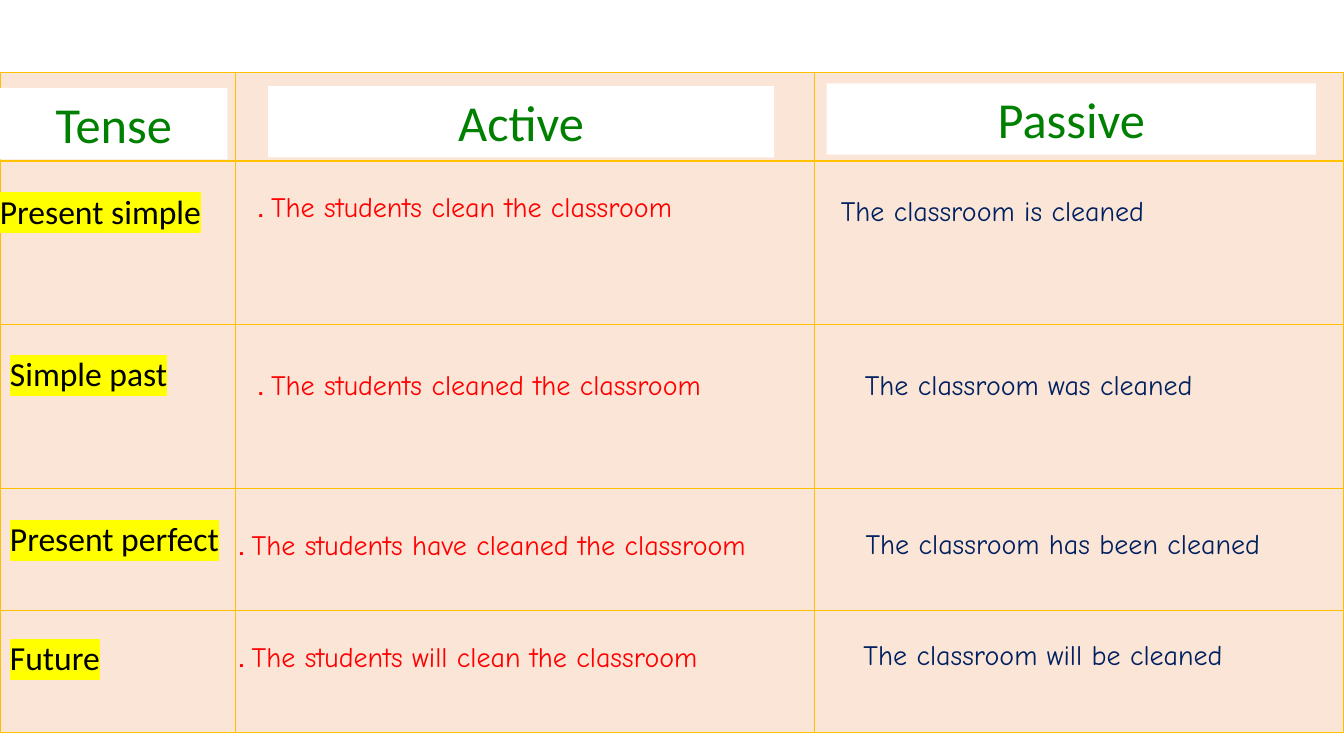
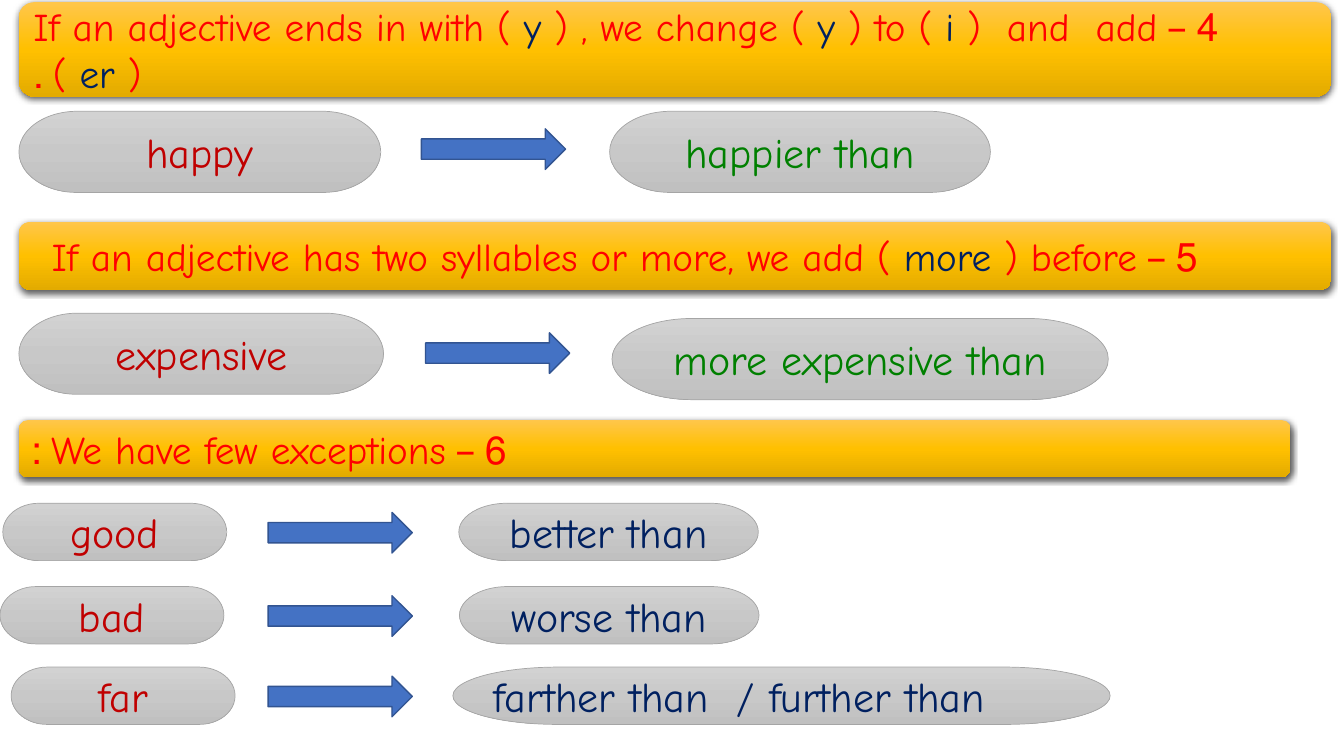
from pptx import Presentation
from pptx.dml.color import RGBColor
from pptx.enum.shapes import MSO_SHAPE as SHAPE
from pptx.enum.text import MSO_ANCHOR as ANCHOR, PP_ALIGN as ALIGN
from pptx.oxml import parse_xml
from pptx.oxml.ns import nsdecls, qn
from pptx.util import Pt

# Colours
RED = RGBColor(0xFF, 0x00, 0x00)
CRIMSON = RGBColor(0xC0, 0x00, 0x00)
GREEN = RGBColor(0x00, 0x80, 0x00)
NAVY = RGBColor(0x00, 0x20, 0x60)
BLACK = RGBColor(0x00, 0x00, 0x00)
WHITE = RGBColor(0xFF, 0xFF, 0xFF)
YELLOW = RGBColor(0xFF, 0xFF, 0x00)
PEACH = RGBColor(0xFB, 0xE5, 0xD6)
GOLD = RGBColor(0xFF, 0xC0, 0x00)
GREY = RGBColor(0xA5, 0xA5, 0xA5)
BLUE = RGBColor(0x44, 0x72, 0xC4)
DARK_BLUE = RGBColor(0x32, 0x54, 0x91)
GREY_BLEND = (RGBColor(0xD2, 0xD2, 0xD2), RGBColor(0xC8, 0xC8, 0xC8), RGBColor(0xC0, 0xC0, 0xC0))
GOLD_BLEND = (RGBColor(0xFF, 0xC6, 0x4B), GOLD, RGBColor(0xE3, 0xAB, 0x00))

# Fonts
PLAIN = "Calibri"
COMIC = "Comic Neue"

# Tense table
COL_WIDTHS = (168, 414, 378)
ROW_HEIGHTS = (63, 117, 117, 87, 87)
HEADINGS = (("Tense", 0, 62.8, 162.5), ("Active", 191.5, 61.5, 361.5), ("Passive", 590.5, 59.5, 349.5))
TENSES = (
    ("Present simple", -7.2, 132.5, 170),
    ("Simple past", 0, 248.8, 163),
    ("Present perfect", 0, 366.5, 184),
    ("Future", 0, 451.5, 121),
)
ACTIVE = (
    ("The students clean the classroom .", 176.5, 132, 400),
    ("The students cleaned the classroom .", 176.5, 258.8, 400),
    ("The students have cleaned the classroom .", 162.7, 373, 414),
    ("The students will clean the classroom .", 162.7, 453, 420),
)
PASSIVE = (
    ("The classroom is cleaned", 593.5, 134.5, 312),
    ("The classroom was cleaned", 610.7, 258.8, 349),
    ("The classroom has been cleaned", 611.2, 372.7, 348),
    ("The classroom will be cleaned", 609.7, 452, 350),
)

# Rules: "|" switches between red and navy, "\v" breaks the line; top, width, height, left inset
RULES = (
    ("4 – If an adjective ends in with ( |y| ) , we change ( |y| ) to ( |i| )  and  add\v( |er| ) .",
     1.5, 937.5, 67.5, 7.2),
    ("5 – If an adjective has two syllables or more, we add ( |more| ) before", 158.5, 937.5, 48.5, 21),
    ("6 – We have few exceptions :", 300, 908.5, 41, 7.2),
)
# Height, adjective (text, left, top, width), arrow (left, top), comparative, its colour and alignment
PAIRS = (
    (58, ("happy", 13.5, 79.5, 258.5), (301, 92), ("happier than", 435.5, 79.5, 272), GREEN, ALIGN.CENTER),
    (58, ("expensive", 13.5, 223.7, 260.5), (304, 237.7),
     ("more expensive than", 437.2, 227.5, 354.5), GREEN, ALIGN.CENTER),
    (41, ("good", 2, 359.5, 160), (191.5, 366), ("better than", 327.7, 359.5, 214), NAVY, ALIGN.CENTER),
    (41, ("bad", 0, 419, 160), (191.5, 425.5), ("worse than", 328.2, 419, 214), NAVY, ALIGN.CENTER),
    (41, ("far", 8, 476.5, 160), (191.5, 483),
     ("farther than  / further than", 323.5, 476.5, 469.5), NAVY, ALIGN.LEFT),
)


def style_run(r, font, size, color):
    r.font.name = font
    r.font.size = Pt(size)
    r.font.color.rgb = color


def set_rtl(p, align):
    p.alignment = align
    p._p.get_or_add_pPr().set("rtl", "1")


def set_text(sp, text, font, size, color, align=ALIGN.LEFT, anchor=ANCHOR.MIDDLE):
    tf = sp.text_frame
    tf.word_wrap = True
    tf.vertical_anchor = anchor
    tf.text = text
    p = tf.paragraphs[0]
    set_rtl(p, align)
    style_run(p.runs[0], font, size, color)
    return p.runs[0]


def add_box(slide, text, left, top, width, font, size, color):
    box = slide.shapes.add_textbox(Pt(left), Pt(top), Pt(width), Pt(36))
    return set_text(box, text, font, size, color, anchor=ANCHOR.TOP)


def highlight(r, color):
    mark = parse_xml(f'<a:highlight {nsdecls("a")}><a:srgbClr val="{color}"/></a:highlight>')
    r._r.rPr.find(qn("a:solidFill")).addnext(mark)


def add_figure(slide, kind, left, top, width, height, fill, line=None, line_width=1):
    """Add a preset shape; several colours as fill give a downward blend."""
    sp = slide.shapes.add_shape(kind, Pt(left), Pt(top), Pt(width), Pt(height))
    sp.shadow.inherit = False
    if isinstance(fill, RGBColor):
        sp.fill.solid()
        sp.fill.fore_color.rgb = fill
    else:
        sp.fill.background()
        stops = "".join(f'<a:gs pos="{i * 50000}"><a:srgbClr val="{c}"/></a:gs>'
                        for i, c in enumerate(fill))
        blend = parse_xml(f'<a:gradFill {nsdecls("a")} rotWithShape="1"><a:gsLst>{stops}</a:gsLst>'
                          '<a:lin ang="5400000" scaled="0"/></a:gradFill>')
        props = sp._element.spPr
        props.replace(props.find(qn("a:noFill")), blend)
    if line is None:
        sp.line.fill.background()
    else:
        sp.line.color.rgb = line
        sp.line.width = Pt(line_width)
    return sp


def set_borders(cell, bottom_width):
    props = cell._tc.get_or_add_tcPr()
    for i, (side, width) in enumerate((("L", 1), ("R", 1), ("T", 1), ("B", bottom_width))):
        props.insert(i, parse_xml(
            f'<a:ln{side} {nsdecls("a")} w="{Pt(width)}"><a:solidFill>'
            f'<a:srgbClr val="{GOLD}"/></a:solidFill></a:ln{side}>'))


def add_grid(slide):
    frame = slide.shapes.add_table(len(ROW_HEIGHTS), len(COL_WIDTHS), Pt(0), Pt(52),
                                   Pt(sum(COL_WIDTHS)), Pt(sum(ROW_HEIGHTS)))
    table = frame.table
    for col, width in zip(table.columns, COL_WIDTHS):
        col.width = Pt(width)
    for i, (row, height) in enumerate(zip(table.rows, ROW_HEIGHTS)):
        row.height = Pt(height)
        for cell in row.cells:
            cell.fill.solid()
            cell.fill.fore_color.rgb = PEACH
            set_borders(cell, 2 if i == 0 else 1)


def add_rule(slide, text, top, width, height, inset):
    band = add_figure(slide, SHAPE.ROUNDED_RECTANGLE, 13.5, top, width, height, GOLD_BLEND)
    band._element.spPr.find(qn("a:effectLst")).append(parse_xml(
        f'<a:outerShdw {nsdecls("a")} blurRad="{Pt(4.5)}" dist="{Pt(1.5)}" dir="5400000" '
        'algn="ctr" rotWithShape="0"><a:srgbClr val="000000"><a:alpha val="63000"/>'
        '</a:srgbClr></a:outerShdw>'))
    tf = band.text_frame
    tf.word_wrap = True
    tf.vertical_anchor = ANCHOR.MIDDLE
    tf.margin_left = Pt(inset)
    p = tf.paragraphs[0]
    set_rtl(p, ALIGN.LEFT)
    for n, line in enumerate(text.split("\v")):
        if n:
            p.add_line_break()
        for i, part in enumerate(line.split("|")):
            r = p.add_run()
            r.text = part
            style_run(r, COMIC, 28, NAVY if i % 2 else RED)


def add_pill(slide, text, left, top, width, height, color, align=ALIGN.CENTER):
    pill = add_figure(slide, SHAPE.FLOWCHART_TERMINATOR, left, top, width, height,
                      GREY_BLEND, GREY, 0.5)
    set_text(pill, text, COMIC, 30, color, align)


def build_tenses(slide):
    add_grid(slide)
    for text, left, top, width in HEADINGS:
        sp = add_figure(slide, SHAPE.RECTANGLE, left, top, width, 51, WHITE)
        set_text(sp, text, PLAIN, 36, GREEN, ALIGN.CENTER, ANCHOR.TOP)
    for tense in TENSES:
        highlight(add_box(slide, *tense, PLAIN, 24, BLACK), YELLOW)
    for sentences, color in ((ACTIVE, RED), (PASSIVE, NAVY)):
        for sentence in sentences:
            add_box(slide, *sentence, COMIC, 20, color)


def build_comparatives(slide):
    for rule in RULES:
        add_rule(slide, *rule)
    for height, adjective, arrow, comparative, color, align in PAIRS:
        add_pill(slide, *adjective, height, CRIMSON)
        add_figure(slide, SHAPE.RIGHT_ARROW, *arrow, 103, 29, BLUE, DARK_BLUE)
        add_pill(slide, *comparative, height, color, align)


def main():
    prs = Presentation()
    prs.slide_width, prs.slide_height = Pt(960), Pt(540)
    for build in (build_tenses, build_comparatives):
        build(prs.slides.add_slide(prs.slide_layouts[6]))
    prs.save("out.pptx")


if __name__ == "__main__":
    main()
